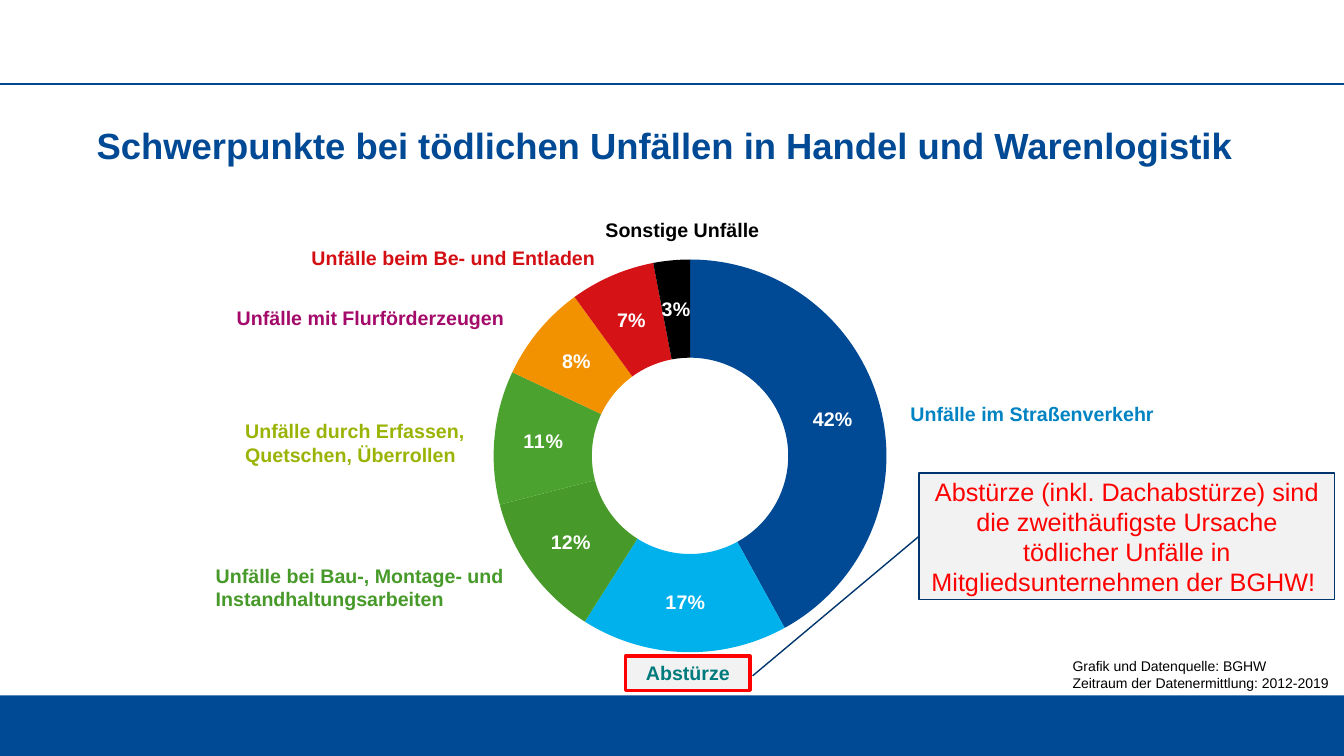
import pptx
import pptx.chart.data
import pptx.dml.color
import pptx.enum.chart
import pptx.enum.shapes
import pptx.enum.text
import pptx.oxml
import pptx.util
from lxml import etree

SHAPE = pptx.enum.shapes.MSO_SHAPE
ALIGN = pptx.enum.text.PP_ALIGN
ANCHOR = pptx.enum.text.MSO_ANCHOR
BLUE, RED, PALE = "004994", "FF0000", "F2F2F2"
SLICES = [(42, BLUE), (17, "00B1EB"), (12, "479A2A"), (11, "4CA22F"),
          (8, "F39200"), (7, "D51317"), (3, "000000")]
LABELS = [
    ("Unfälle im Straßenverkehr", "0083C2", (10.72, 4.73, 3.66, 0.41)),
    ("Unfälle bei Bau-, Montage- und Instandhaltungsarbeiten", "479A2A", (2.45, 6.65, 4.01, 0.68)),
    ("Unfälle durch Erfassen, Quetschen, Überrollen", "9BB305", (2.8, 4.93, 3.02, 0.68)),
    ("Unfälle mit Flurförderzeugen", "A30A6A", (2.7, 3.58, 3.52, 0.41)),
    ("Unfälle beim Be- und Entladen", "D40F14", (3.59, 2.87, 3.66, 0.41)),
    ("Sonstige Unfälle", "000000", (7.09, 2.54, 2.2, 0.41)),
]


def ink(code):
    return pptx.dml.color.RGBColor.from_string(code)


class Page:
    """Draws styled elements on one slide with a grid of 16 columns and 9 rows."""

    def __init__(self, deck, font):
        self.font = font
        self.col = deck.slide_width / 16
        self.row = deck.slide_height / 9
        self.slide = deck.slides.add_slide(deck.slide_layouts[5])
        self.shapes = self.slide.shapes

    def place(self, left, top, width, height):
        return (round(left * self.col), round(top * self.row),
                round(width * self.col), round(height * self.row))

    def letter(self, shape, text, size, color, bold=False, align=ALIGN.LEFT,
               anchor=ANCHOR.TOP, pads=(0.1, 0.05, 0.1, 0.05)):
        frame = shape.text_frame
        frame.text = text
        frame.word_wrap = True
        frame.auto_size = pptx.enum.text.MSO_AUTO_SIZE.NONE
        frame.vertical_anchor = anchor
        (frame.margin_left, frame.margin_top, frame.margin_right,
         frame.margin_bottom) = map(pptx.util.Inches, pads)
        for para in frame.paragraphs:
            para.alignment = align
            for run in para.runs:
                run.font.name = self.font
                run.font.size = pptx.util.Pt(size)
                run.font.bold = bold
                run.font.color.rgb = ink(color)

    def title(self, text, box):
        head = self.shapes.title
        head.left, head.top, head.width, head.height = self.place(*box)
        self.letter(head, text, 26, BLUE, True, pads=(0, 0, 0.1, 0.05))
        head.text_frame.paragraphs[0].line_spacing = 0.9

    def label(self, text, color, box, size=14, bold=True, **style):
        self.letter(self.shapes.add_textbox(*self.place(*box)), text, size, color, bold, **style)

    def block(self, kind, box, fill, edge=None, width=1):
        shape = self.shapes.add_shape(kind, *self.place(*box))
        shape.shadow.inherit = False
        shape.fill.solid()
        shape.fill.fore_color.rgb = ink(fill)
        if edge:
            shape.line.color.rgb = ink(edge)
            shape.line.width = pptx.util.Pt(width)
        else:
            shape.line.fill.background()
        return shape

    def rule(self, row, color, width):
        left, top, span, _ = self.place(0, row, 16, 0)
        line = self.shapes.add_connector(
            pptx.enum.shapes.MSO_CONNECTOR.STRAIGHT, left, top, left + span, top)
        line.line.color.rgb = ink(color)
        line.line.width = pptx.util.Pt(width)
        etree.SubElement(line._element.spPr, pptx.oxml.ns.qn("a:effectLst"))

    def ring(self, slices, box, plot):
        data = pptx.chart.data.CategoryChartData()
        data.categories = [str(n + 1) for n in range(len(slices))]
        data.add_series("Series 1", [value for value, _ in slices])
        chart = self.shapes.add_chart(
            pptx.enum.chart.XL_CHART_TYPE.DOUGHNUT, *self.place(*box), data).chart
        chart.has_legend = chart.has_title = False
        chart.font.name = self.font
        chart.font.size = pptx.util.Pt(18)
        chart.font.color.rgb = ink("000000")
        pie = chart.plots[0]
        pie.vary_by_categories = True
        for n, (_, color) in enumerate(slices):
            part = pie.series[0].points[n].format
            part.fill.solid()
            part.fill.fore_color.rgb = ink(color)
            part.line.fill.background()
        tags = pie.series[0].data_labels
        tags.show_value = False
        tags.show_percentage = True
        tags.number_format = "0%"
        tags.number_format_is_linked = False
        tags.font.name = self.font
        tags.font.size = pptx.util.Pt(14)
        tags.font.bold = True
        tags.font.color.rgb = ink("FFFFFF")
        self.fit(chart, plot)

    def fit(self, chart, plot):
        qn = pptx.oxml.ns.qn
        area = chart._chartSpace.find(".//" + qn("c:plotArea"))
        area.find(".//" + qn("c:holeSize")).set("val", "50")
        for old in area.findall(qn("c:layout")):
            area.remove(old)
        outer = etree.Element(qn("c:layout"))
        area.insert(0, outer)
        inner = etree.SubElement(outer, qn("c:manualLayout"))
        parts = [("layoutTarget", "inner"), ("xMode", "edge"), ("yMode", "edge"),
                 *zip("xywh", plot)]
        for name, value in parts:
            etree.SubElement(inner, qn("c:" + name)).set("val", str(value))


def main():
    deck = pptx.Presentation()
    deck.slide_width = pptx.util.Inches(13.33)
    deck.slide_height = pptx.util.Inches(7.5)
    page = Page(deck, "Arial")
    page.block(SHAPE.RECTANGLE, (0, 8.28, 16, 0.72), BLUE)
    page.rule(1, BLUE, 2)
    page.title("Schwerpunkte bei tödlichen Unfällen in Handel und Warenlogistik",
               (1.15, 1.52, 13.71, 0.68))
    page.ring(SLICES, (4.69, 2.99, 6.98, 4.78), (0.17, 0.02, 0.67, 0.98))
    falls = page.block(SHAPE.RECTANGLE, (7.45, 7.81, 1.48, 0.41), PALE, RED, 2.25)
    page.letter(falls, "Abstürze", 14, "007B7D", True, ALIGN.CENTER)
    call = page.block(SHAPE.LINE_CALLOUT_1, (10.94, 5.63, 4.95, 1.51), PALE, "00366D")
    for n, share in enumerate((0.5, 0, 1.6, -0.4)):
        call.adjustments[n] = share
    page.letter(call, "Abstürze (inkl. Dachabstürze) sind die zweithäufigste Ursache "
                "tödlicher Unfälle in Mitgliedsunternehmen der BGHW! ",
                18, RED, align=ALIGN.CENTER, anchor=ANCHOR.MIDDLE)
    for text, color, box in LABELS:
        page.label(text, color, box)
    page.label("Grafik und Datenquelle: BGHW\nZeitraum der Datenermittlung: 2012-2019",
               "000000", (12.72, 7.78, 3.28, 0.5), 10, False, pads=(0.04,) * 4)
    deck.save("out.pptx")


if __name__ == "__main__":
    main()
